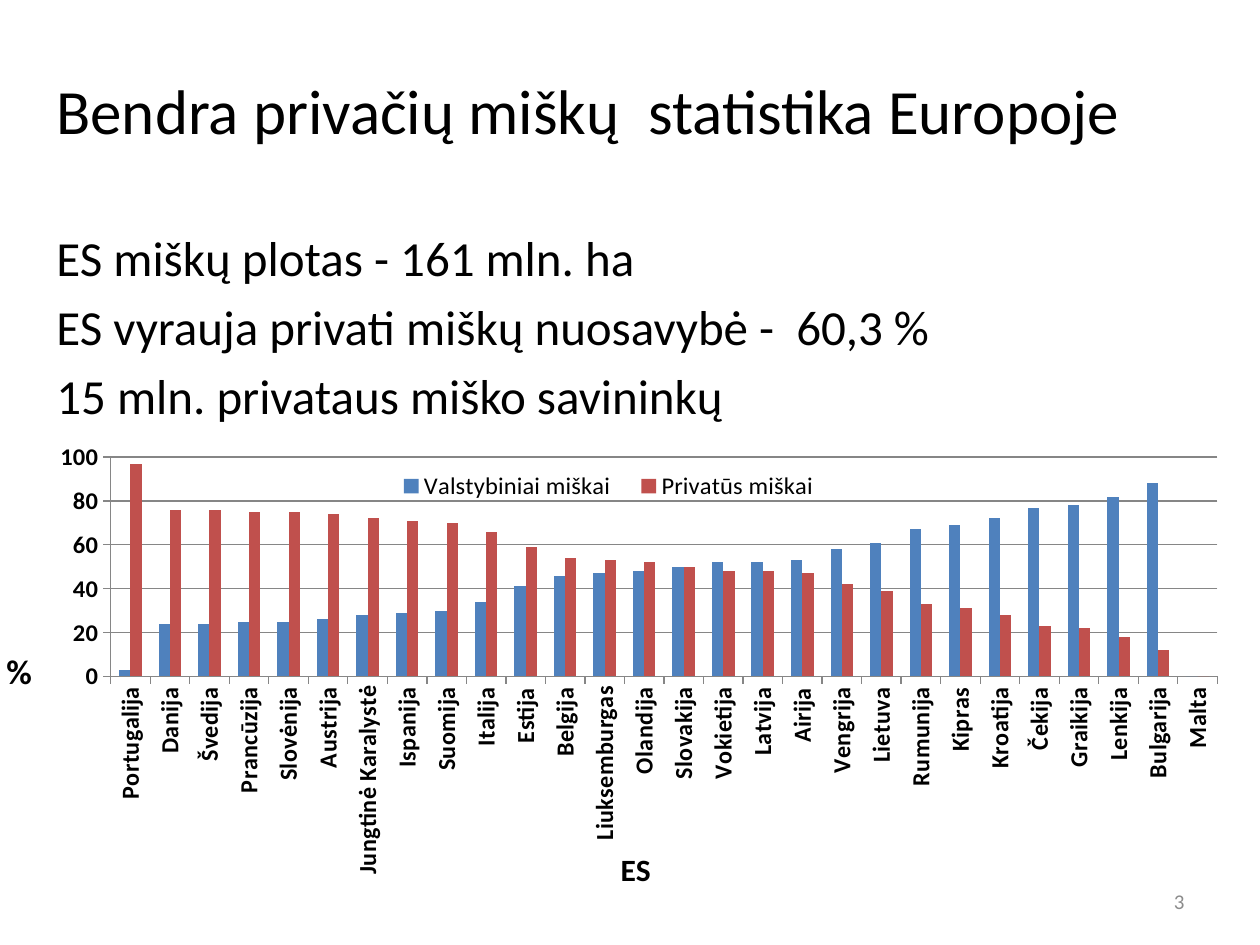
from typing import NamedTuple

from lxml.etree import SubElement
from pptx import Presentation
from pptx.chart.data import CategoryChartData
from pptx.dml.color import RGBColor
from pptx.enum.chart import XL_CHART_TYPE as ChartType
from pptx.enum.chart import XL_LEGEND_POSITION as LegendPosition
from pptx.enum.chart import XL_TICK_MARK as TickMark
from pptx.enum.text import MSO_ANCHOR as Anchor
from pptx.enum.text import PP_ALIGN as Align
from pptx.oxml.ns import qn
from pptx.util import Inches, Pt

FONT = "Calibri"
BLACK = RGBColor(0x00, 0x00, 0x00)
GREY = RGBColor(0x8C, 0x8C, 0x8C)
AXIS_GREY = RGBColor(0x86, 0x86, 0x86)
STATE_BLUE = RGBColor(0x4F, 0x81, 0xBD)
PRIVATE_RED = RGBColor(0xC0, 0x50, 0x4D)


class Line(NamedTuple):
    text: str
    size: float
    space_before: float = 0
    color: RGBColor = BLACK
    align: Align = Align.LEFT


class Ownership(NamedTuple):
    name: str
    shares: list[int]
    color: RGBColor


HEADLINES = [
    Line("Bendra privačių miškų  statistika Europoje", 36),
    Line("ES miškų plotas - 161 mln. ha", 28, 46),
    Line("ES vyrauja privati miškų nuosavybė -  60,3 %", 28, 5.6),
    Line("15 mln. privataus miško savininkų", 28, 5.6),
]
COUNTRIES = [
    "Portugalija", "Danija", "Švedija", "Prancūzija", "Slovėnija", "Austrija",
    "Jungtinė Karalystė", "Ispanija", "Suomija", "Italija", "Estija", "Belgija",
    "Liuksemburgas", "Olandija", "Slovakija", "Vokietija", "Latvija", "Airija",
    "Vengrija", "Lietuva", "Rumunija", "Kipras", "Kroatija", "Čekija",
    "Graikija", "Lenkija", "Bulgarija", "Malta",
]
OWNERSHIPS = [
    Ownership("Valstybiniai miškai",
              [3, 24, 24, 25, 25, 26, 28, 29, 30, 34, 41, 46, 47, 48,
               50, 52, 52, 53, 58, 61, 67, 69, 72, 77, 78, 82, 88, 0], STATE_BLUE),
    Ownership("Privatūs miškai",
              [97, 76, 76, 75, 75, 74, 72, 71, 70, 66, 59, 54, 53, 52,
               50, 48, 48, 47, 42, 39, 33, 31, 28, 23, 22, 18, 12, 0], PRIVATE_RED),
]


def add_text(slide, left: float, top: float, width: float, height: float,
             lines: list[Line], anchor: Anchor = Anchor.TOP) -> None:
    frame = slide.shapes.add_textbox(
        Inches(left), Inches(top), Inches(width), Inches(height)).text_frame
    frame.word_wrap = True
    frame.vertical_anchor = anchor
    for index, line in enumerate(lines):
        paragraph = frame.add_paragraph() if index else frame.paragraphs[0]
        paragraph.alignment = line.align
        paragraph.space_before = Pt(line.space_before)
        run = paragraph.add_run()
        run.text = line.text
        style_font(run.font, line.size, line.color)


def style_font(font, size: float, color: RGBColor = BLACK, bold: bool = False) -> None:
    font.name = FONT
    font.size = Pt(size)
    font.bold = bold
    font.color.rgb = color


def place(element, inner: bool = False, **fractions: float) -> None:
    """Give a chart part a manual layout in fractions of the chart area."""
    old = element.find(qn("c:layout"))
    if old is not None:
        element.remove(old)
    layout = SubElement(element, qn("c:layout"))
    manual = SubElement(layout, qn("c:manualLayout"))
    if inner:
        SubElement(manual, qn("c:layoutTarget")).set("val", "inner")
    for key in ("x", "y"):
        SubElement(manual, qn(f"c:{key}Mode")).set("val", "edge")
    for key, value in fractions.items():
        SubElement(manual, qn(f"c:{key}")).set("val", str(value))
    overlay = element.find(qn("c:overlay"))
    if overlay is None:
        element.insert(0, layout)
    else:
        overlay.addprevious(layout)


def style_axis(axis, title: str, size: float, x: float, y: float) -> None:
    axis.major_tick_mark = TickMark.OUTSIDE
    axis.minor_tick_mark = TickMark.NONE
    axis.format.line.color.rgb = AXIS_GREY
    style_font(axis.tick_labels.font, 14, bold=True)
    frame = axis.axis_title.text_frame
    run = frame.paragraphs[0].add_run()
    run.text = title
    style_font(run.font, size, bold=True)
    body = frame._txBody.find(qn("a:bodyPr"))
    body.set("rot", "0")
    body.set("vert", "horz")
    place(axis.axis_title._element, x=x, y=y)


def add_ownership_chart(slide) -> None:
    data = CategoryChartData(number_format="0")
    data.categories = COUNTRIES
    for ownership in OWNERSHIPS:
        data.add_series(ownership.name, ownership.shares)
    chart = slide.shapes.add_chart(
        ChartType.COLUMN_CLUSTERED, Inches(0), Inches(3.51),
        Inches(9.76), Inches(3.62), data).chart
    style_font(chart.font, 10)
    chart.has_title = False

    plot = chart.plots[0]
    plot.gap_width = 150
    plot.overlap = 0
    plot.vary_by_categories = False
    for series, ownership in zip(plot.series, OWNERSHIPS):
        series.format.fill.solid()
        series.format.fill.fore_color.rgb = ownership.color

    countries, percent = chart.category_axis, chart.value_axis
    style_axis(countries, "ES", 18, 0.5, 0.89)
    countries_text = countries._element.find(qn("c:txPr")).find(qn("a:bodyPr"))
    countries_text.set("rot", "-5400000")
    countries_text.set("vert", "horz")
    style_axis(percent, "%", 20, 0, 0.44)
    percent.minimum_scale, percent.maximum_scale, percent.major_unit = 0, 100, 20
    percent.tick_labels.number_format = "0"
    percent.tick_labels.number_format_is_linked = False
    percent.has_major_gridlines = True
    percent.major_gridlines.format.line.color.rgb = AXIS_GREY
    place(countries._element.getparent(), inner=True, x=0.09, y=0.03, w=0.9, h=0.49)

    chart.has_legend = True
    legend = chart.legend
    legend.position = LegendPosition.RIGHT
    legend.include_in_layout = False
    style_font(legend.font, 14)
    place(legend._element, x=0.31, y=0.05, w=0.37, h=0.09)


def main() -> None:
    deck = Presentation()
    deck.slide_width, deck.slide_height = Inches(10), Inches(7.5)
    slide = deck.slides.add_slide(deck.slide_layouts[6])
    add_text(slide, 0.35, 0.52, 9, 5.19, HEADLINES)
    add_text(slide, 7.17, 6.95, 2.33, 0.4,
             [Line("3", 12, color=GREY, align=Align.RIGHT)], Anchor.MIDDLE)
    add_ownership_chart(slide)
    deck.save("out.pptx")


if __name__ == "__main__":
    main()
